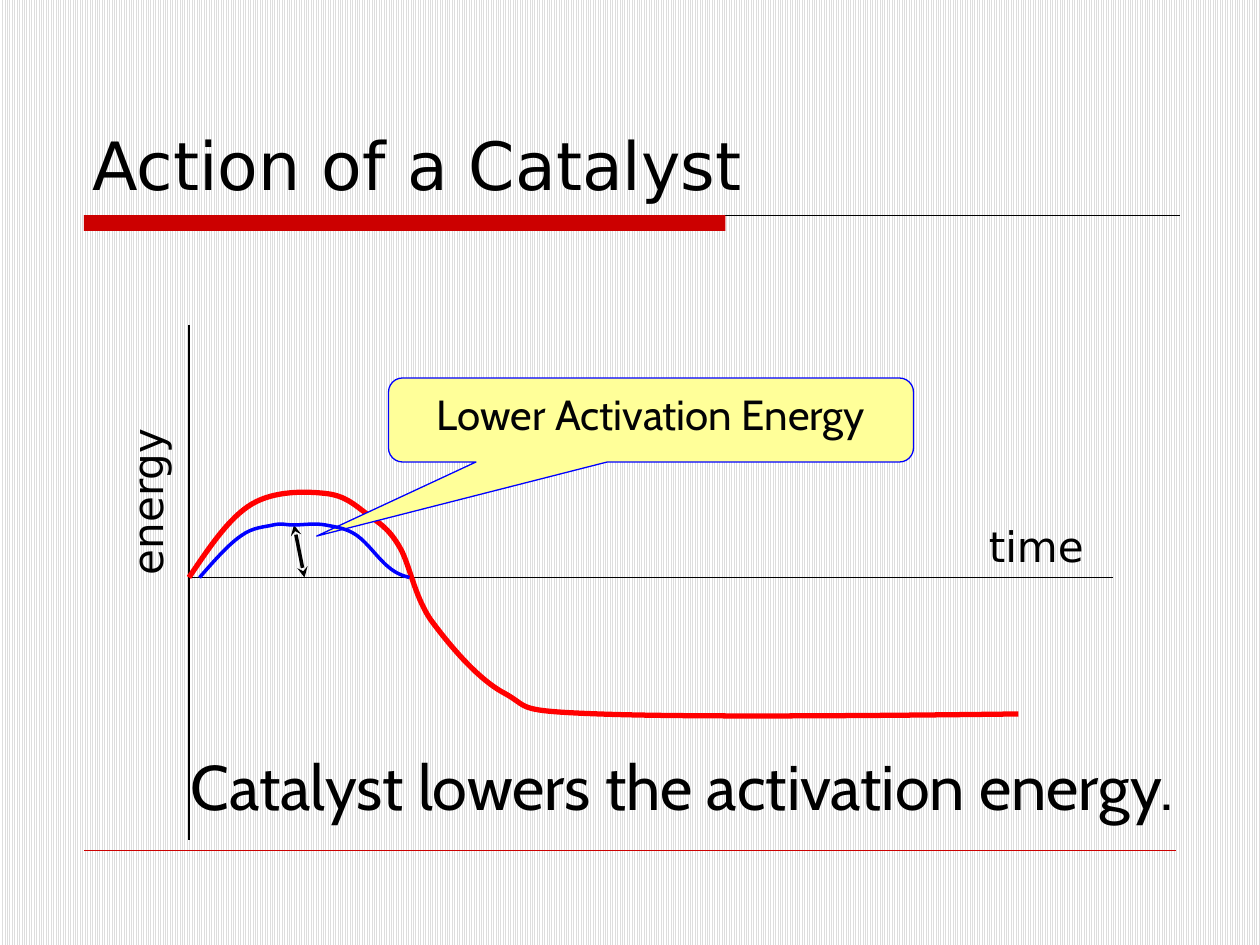
from dataclasses import dataclass
from lxml.etree import SubElement
from pptx import Presentation
from pptx.dml.color import RGBColor as RGB
from pptx.enum.dml import MSO_PATTERN
from pptx.enum.shapes import MSO_CONNECTOR, MSO_SHAPE
from pptx.enum.text import MSO_ANCHOR as ANCHOR, MSO_AUTO_SIZE as FIT, PP_ALIGN as ALIGN
from pptx.oxml.ns import qn
from pptx.util import Pt

PX = 7620  # EMU per px, 120 px to the inch


@dataclass(frozen=True)
class Theme:
    black: str = "000000"
    ink: str = "030305"
    accent: str = "CC0000"
    red: str = "FF0000"
    blue: str = "0000FF"
    note: str = "FFFF99"
    stripe: str = "DDDDDD"
    paper: str = "FFFFFF"
    sans: str = "DejaVu Sans"
    cabin: str = "Cabin"
    title: int = 38
    caption: int = 36
    label: int = 24


def emu(*px):
    return [round(v * PX) for v in px]


def apply(obj, **values):
    for name, value in values.items():
        setattr(obj, name, value)


class Slide:
    def __init__(self, prs, theme):
        self.t = theme
        self.s = prs.slides.add_slide(prs.slide_layouts[5])

    def background(self):
        fill = self.s.background.fill
        fill.patterned()
        fill.pattern = MSO_PATTERN.NARROW_VERTICAL
        fill.fore_color.rgb = RGB.from_string(self.t.stripe)
        fill.back_color.rgb = RGB.from_string(self.t.paper)

    def put_text(self, sp, text, size, font, color, align=ALIGN.LEFT, **frame):
        tf = sp.text_frame
        apply(tf, word_wrap=True, **frame)
        p = tf.paragraphs[0]
        p.alignment = align
        r = p.add_run()
        r.text = text
        apply(r.font, size=Pt(size), name=font)
        r.font.color.rgb = RGB.from_string(color)

    def title(self, text, box):
        sp = self.s.shapes.title
        apply(sp, **dict(zip(("left", "top", "width", "height"), emu(*box))))
        self.put_text(sp, text, self.t.title, self.t.sans, self.t.black,
                      vertical_anchor=ANCHOR.BOTTOM, auto_size=FIT.NONE)

    def text(self, text, box, size, font, rotation=0):
        sp = self.s.shapes.add_textbox(*emu(*box))
        sp.rotation = rotation
        self.put_text(sp, text, size, font, self.t.black, auto_size=FIT.SHAPE_TO_FIT_TEXT)

    def stroke(self, sp, color, width):
        sp.line.color.rgb = RGB.from_string(color)
        sp.line.width = Pt(width)

    def shape(self, kind, box, fill):
        sp = self.s.shapes.add_shape(kind, *emu(*box))
        sp.shadow.inherit = False
        sp.fill.solid()
        sp.fill.fore_color.rgb = RGB.from_string(fill)
        sp.line.fill.background()
        return sp

    def callout(self, text, box, adjustments):
        sp = self.shape(MSO_SHAPE.ROUNDED_RECTANGULAR_CALLOUT, box, self.t.note)
        for i, value in enumerate(adjustments):
            sp.adjustments[i] = value
        self.stroke(sp, self.t.blue, 0.75)
        self.put_text(sp, text, self.t.label, self.t.cabin, self.t.ink, ALIGN.CENTER,
                      vertical_anchor=ANCHOR.TOP)

    def line(self, start, end, color, width, arrows=False):
        c = self.s.shapes.add_connector(MSO_CONNECTOR.STRAIGHT, *emu(*start, *end))
        self.stroke(c, color, width)
        sp_pr = c._element.spPr
        if arrows:
            for tag in ("a:headEnd", "a:tailEnd"):
                SubElement(sp_pr.find(qn("a:ln")), qn(tag), type="stealth")
        SubElement(sp_pr, qn("a:effectLst"))

    def curve(self, start, points, color, width):
        """Draw Bézier segments, each given by two control points and an end."""
        builder = self.s.shapes.build_freeform(*start, scale=PX)
        builder.add_line_segments(points, close=False)
        sp = builder.convert_to_shape()
        sp.shadow.inherit = False
        sp.fill.background()
        self.stroke(sp, color, width)
        # Regroup each three straight segments as one cubic segment
        steps = list(sp._element.iter(qn("a:lnTo")))
        outline = steps[0].getparent()
        for i in range(0, len(steps), 3):
            cubic = SubElement(outline, qn("a:cubicBezTo"))
            for step in steps[i:i + 3]:
                cubic.append(step[0])
                outline.remove(step)


def main():
    prs = Presentation()
    prs.slide_width, prs.slide_height = emu(1200, 900)
    t = Theme()
    slide = Slide(prs, t)

    # Background, rules and title
    slide.background()
    slide.line((80, 205), (1124, 205), t.black, 0.75)
    slide.shape(MSO_SHAPE.RECTANGLE, (80, 205, 611, 15), t.accent)
    slide.line((80, 810), (1120, 810), t.accent, 0.25)
    slide.title("Action of a Catalyst", (76, 40, 1050, 160))

    # Axes
    slide.line((180, 310), (180, 800), t.black, 0.75)
    slide.line((180, 550), (1060, 550), t.black, 0.75)

    # Energy without a catalyst
    slide.curve((180, 550), [
        (199, 522), (218, 493), (240, 480),
        (262, 467), (292, 468), (310, 470),
        (329, 472), (338, 481), (350, 490),
        (361, 498), (370, 503), (380, 520),
        (390, 536), (394, 566), (410, 590),
        (427, 613), (454, 646), (480, 660),
        (506, 674), (488, 677), (570, 680),
        (652, 683), (811, 682), (970, 680)], t.red, 3)

    # Activation energy, callout and caption
    slide.line((280, 500), (290, 550), t.black, 2, arrows=True)
    slide.callout("Lower Activation Energy", (370, 360, 500, 80), (-0.637, 1.383, 0.167))
    slide.text("Catalyst lowers the activation energy.", (170, 706, 1130, 85),
               t.caption, t.cabin)

    # Energy with a catalyst
    slide.curve((190, 550), [
        (204, 534), (218, 518), (230, 510),
        (241, 502), (252, 502), (260, 500),
        (269, 498), (271, 500), (280, 500),
        (288, 500), (300, 498), (310, 500),
        (320, 502), (330, 503), (340, 510),
        (350, 517), (361, 533), (370, 540),
        (378, 547), (386, 549), (390, 550)], t.blue, 2)

    # Axis labels
    slide.text("energy", (50, 439, 180, 61), t.label, t.sans, rotation=270)
    slide.text("time", (930, 490, 180, 61), t.label, t.sans)

    prs.save("out.pptx")


if __name__ == "__main__":
    main()
